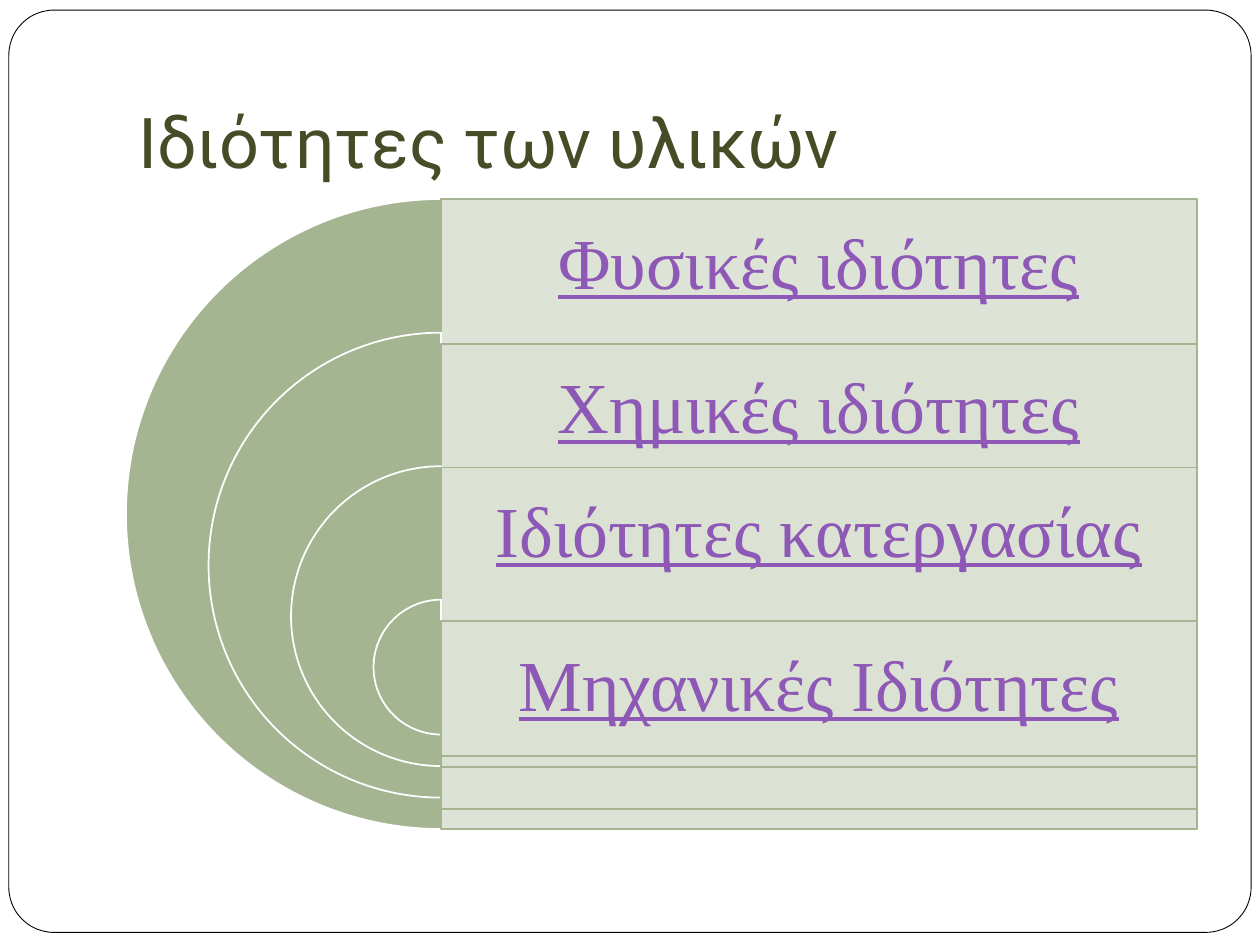
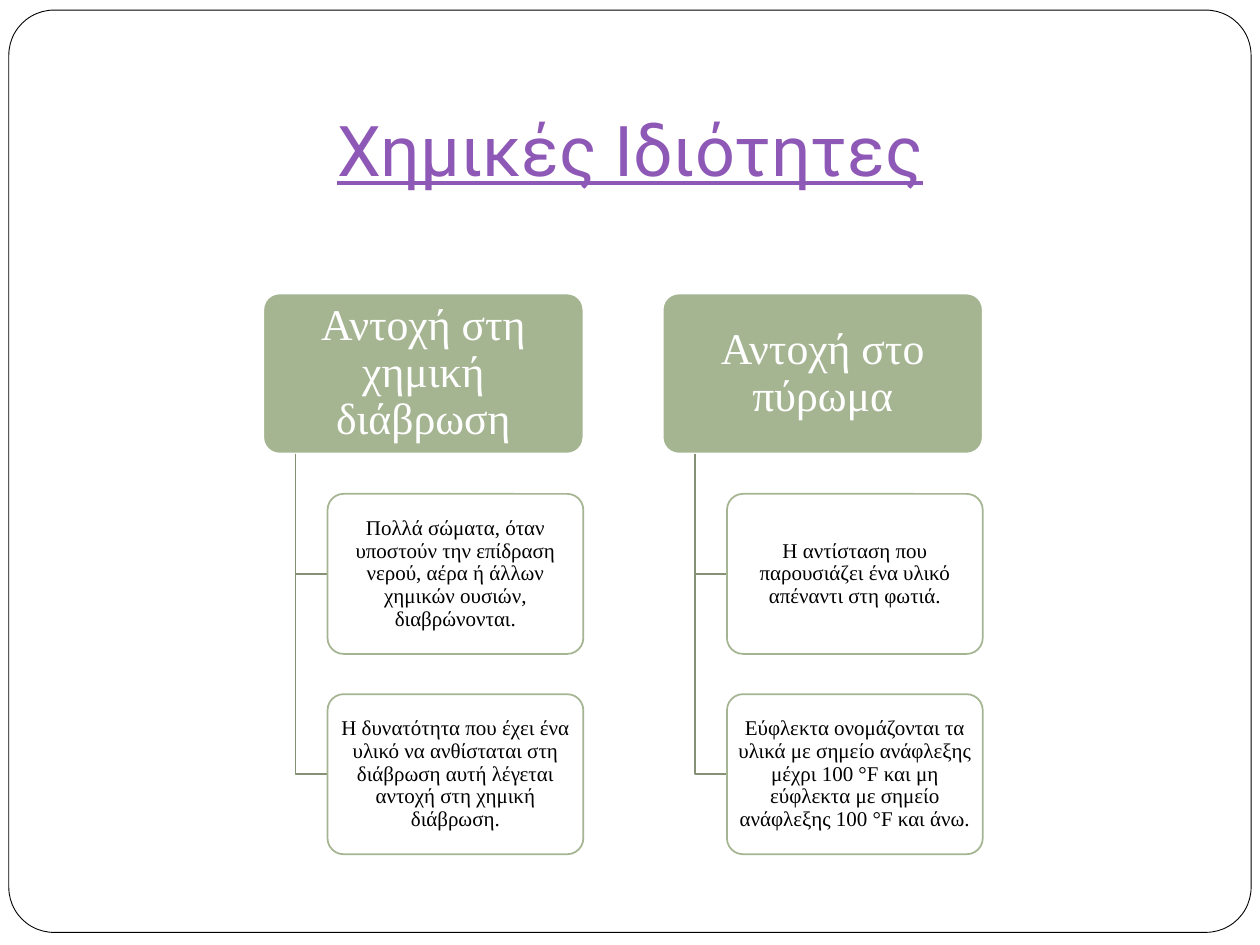
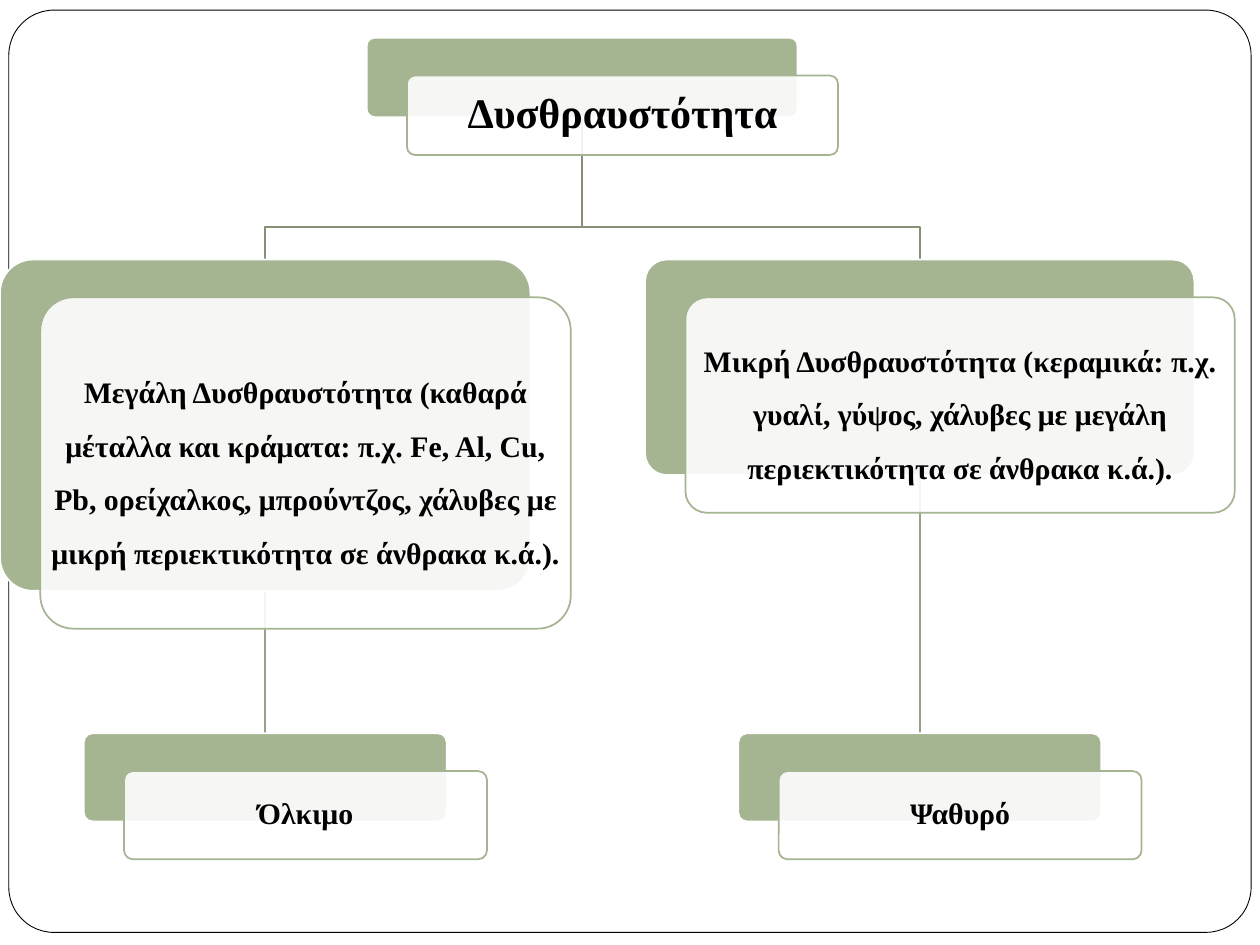
from lxml import etree
from pptx import Presentation
from pptx.dml.color import RGBColor
from pptx.enum.shapes import MSO_CONNECTOR, MSO_SHAPE
from pptx.enum.text import MSO_ANCHOR, PP_ALIGN
from pptx.oxml.ns import qn
from pptx.util import Inches, Pt

RECT = MSO_SHAPE.RECTANGLE
ROUNDED = MSO_SHAPE.ROUNDED_RECTANGLE
PIE = MSO_SHAPE.PIE
STRAIGHT = MSO_CONNECTOR.STRAIGHT
LEFT, CENTER = PP_ALIGN.LEFT, PP_ALIGN.CENTER
MIDDLE, BOTTOM = MSO_ANCHOR.MIDDLE, MSO_ANCHOR.BOTTOM

COLORS = {
    "white": "FFFFFF",
    "black": "000000",
    "sage": "A5B592",
    "pale": "DBE1D3",
    "branch": "849175",
    "leaf_branch": "96A485",
    "title": "444D26",
    "link": "8E58B6",
}
BODY_FONT, TITLE_FONT = "Times New Roman", "Roboto"
TITLE = {"name": TITLE_FONT, "size": Pt(40)}
LINK = {"name": BODY_FONT, "size": Pt(41), "underline": True}
HEADING = {"name": BODY_FONT, "size": Pt(25)}
DETAIL = {"name": BODY_FONT, "size": Pt(12)}
ROOT = {"name": BODY_FONT, "size": Pt(24), "bold": True}
NODE = {"name": BODY_FONT, "size": Pt(17), "bold": True}


def rgb(color):
    return RGBColor.from_string(COLORS[color])


def inches(*lengths):
    return [Inches(length) for length in lengths]


def add_panel(slide, preset, box, fill, line, adjustments=(), alpha=None, width=1):
    """Draw a filled preset shape; alpha is its opacity in percent."""
    panel = slide.shapes.add_shape(preset, *inches(*box))
    panel.shadow.inherit = False
    for index, value in enumerate(adjustments):
        panel.adjustments[index] = value
    panel.fill.solid()
    panel.fill.fore_color.rgb = rgb(fill)
    if alpha:
        fill_color = panel.fill._xPr.find(qn("a:solidFill"))[0]
        etree.SubElement(fill_color, qn("a:alpha"), val=str(alpha * 1000))
    panel.line.color.rgb = rgb(line)
    panel.line.width = Pt(width)


def add_label(slide, box, text, style, color, insets, align=CENTER,
              anchor=MIDDLE, spacing=0.9):
    """Place text; insets are left and right, top, bottom."""
    frame = slide.shapes.add_textbox(*inches(*box)).text_frame
    side, top, bottom = inches(*insets)
    layout = {"word_wrap": True, "vertical_anchor": anchor,
              "margin_left": side, "margin_right": side,
              "margin_top": top, "margin_bottom": bottom}
    for key, value in layout.items():
        setattr(frame, key, value)
    paragraph = frame.paragraphs[0]
    paragraph.alignment = align
    paragraph.line_spacing = spacing
    run = paragraph.add_run()
    run.text = text
    for key, value in style.items():
        setattr(run.font, key, value)
    run.font.color.rgb = rgb(color)


def add_title(slide, left, top, text, color, align, style=TITLE):
    add_label(slide, (left, top, 8.5, 1.25), text, style, color,
              (0.1, 0.05, 0.1), align, BOTTOM, spacing=1.0)


def add_elbow(slide, points):
    start, *corners = [inches(*point) for point in points]
    builder = slide.shapes.build_freeform(*start)
    builder.add_line_segments(corners, close=False)
    elbow = builder.convert_to_shape()
    elbow.shadow.inherit = False
    elbow.fill.background()
    elbow.line.color.rgb = rgb("branch")
    elbow.line.width = Pt(1)


def add_drop(slide, x, top, bottom):
    drop = slide.shapes.add_connector(STRAIGHT, *inches(x, top, x, bottom))
    drop.line.color.rgb = rgb("leaf_branch")
    drop.line.width = Pt(1)
    etree.SubElement(drop._element.spPr, qn("a:effectLst"))


def add_framed_slide(deck):
    slide = deck.slides.add_slide(deck.slide_layouts[6])
    add_panel(slide, ROUNDED, (0.07, 0.08, 9.86, 7.32), "white", "black",
              [0.049], width=0.5)
    return slide


def add_card(slide, box, text, style, color, insets, fill="white", line="sage",
             alpha=90, spacing=0.9):
    add_panel(slide, ROUNDED, box, fill, line, [0.1], alpha)
    add_label(slide, box, text, style, color, insets, spacing=spacing)


def add_topic_column(slide, left, heading, details):
    top, height, gap, indent = 2.33, 1.27, 0.32, 0.51
    add_card(slide, (left, top, 2.54, height), heading, HEADING, "white",
             (0.05, 0.03, 0.03), "sage", "white", alpha=None)
    trunk, card_left = left + indent / 2, left + indent
    for row, detail in enumerate(details, start=1):
        card_top = top + row * (height + gap)
        middle = card_top + height / 2
        add_elbow(slide, [(trunk, top + height), (trunk, middle),
                          (card_left, middle)])
        add_card(slide, (card_left, card_top, 2.03, height), detail, DETAIL,
                 "black", (0.03, 0.02, 0.02))


def add_layered_node(slide, box, text, style=NODE, inset=0.07, spacing=0.9):
    """Draw a green plate with a translucent text card shifted over it."""
    left, top, width, height = box
    add_panel(slide, ROUNDED, box, "sage", "white", [0.1])
    add_card(slide, (left + 0.32, top + 0.3, width, height), text, style,
             "black", (inset, inset, inset), spacing=spacing)


def build_properties(deck):
    slide = add_framed_slide(deck)
    add_title(slide, 1, 0.3, "Ιδιότητες των υλικών", "title", LEFT)
    rows = [
        (1.58, "Φυσικές ιδιότητες"),
        (2.73, "Χημικές ιδιότητες"),
        (3.71, "Ιδιότητες κατεργασίας"),
        (4.93, "Μηχανικές Ιδιότητες"),
    ]
    axis, step = 3.5, 1.06
    for index, (top, text) in enumerate(rows):
        diameter = 5 - 1.31 * index
        add_panel(slide, PIE, (axis - diameter / 2, 1.58 + step * index,
                               diameter, diameter), "sage", "white", [54, 162])
        add_panel(slide, RECT, (axis, top, 6, diameter), "pale", "sage", alpha=90)
        add_label(slide, (axis, top, 6, step), text, LINK, "link",
                  (0.17, 0.17, 0.17))


def build_chemical(deck):
    slide = add_framed_slide(deck)
    add_title(slide, 0.75, 0.36, "Χημικές Ιδιότητες", "link", CENTER,
              {**TITLE, "underline": True})
    add_topic_column(slide, 2.09, "Αντοχή στη χημική διάβρωση", [
        "Πολλά σώματα, όταν υποστούν την επίδραση νερού, αέρα ή άλλων "
        "χημικών ουσιών, διαβρώνονται.",
        "Η δυνατότητα που έχει ένα υλικό να ανθίσταται στη διάβρωση αυτή "
        "λέγεται αντοχή στη χημική διάβρωση.",
    ])
    add_topic_column(slide, 5.26, "Αντοχή στο πύρωμα", [
        "Η αντίσταση που παρουσιάζει ένα υλικό απέναντι στη φωτιά.",
        "Εύφλεκτα ονομάζονται τα υλικά με σημείο ανάφλεξης μέχρι 100 °F και "
        "μη εύφλεκτα με σημείο ανάφλεξης 100 °F και άνω.",
    ])


def build_toughness(deck):
    slide = add_framed_slide(deck)
    root_x, root_bottom, fork, branch_top, leaf_top = 4.62, 0.93, 1.8, 2.06, 5.82
    branches = [
        (0, 4.21, 2.63,
         "Μεγάλη Δυσθραυστότητα (καθαρά μέταλλα και κράματα: π.χ. Fe, Al, Cu, "
         "Pb, ορείχαλκος, μπρούντζος, χάλυβες με μικρή περιεκτικότητα σε "
         "άνθρακα κ.ά.).", "Όλκιμο"),
        (5.12, 4.36, 1.71,
         "Μικρή Δυσθραυστότητα (κεραμικά: π.χ. γυαλί, γύψος, χάλυβες με "
         "μεγάλη περιεκτικότητα σε άνθρακα κ.ά.).", "Ψαθυρό"),
    ]
    for left, width, height, _, _ in branches:
        x = left + width / 2
        add_drop(slide, x, branch_top + height, leaf_top)
        add_elbow(slide, [(root_x, root_bottom), (root_x, fork), (x, fork),
                          (x, branch_top)])
    add_layered_node(slide, (2.91, 0.3, 3.42, 0.63), "Δυσθραυστότητα", ROOT, 0.1)
    leaf_width = 2.88
    for left, width, height, text, leaf in branches:
        add_layered_node(slide, (left, branch_top, width, height), text,
                         spacing=1.5)
        add_layered_node(slide, (left + (width - leaf_width) / 2, leaf_top,
                                 leaf_width, 0.7), leaf)


def main():
    deck = Presentation()
    deck.slide_width, deck.slide_height = inches(10, 7.5)
    build_properties(deck)
    build_chemical(deck)
    build_toughness(deck)
    deck.save("out.pptx")


if __name__ == "__main__":
    main()
